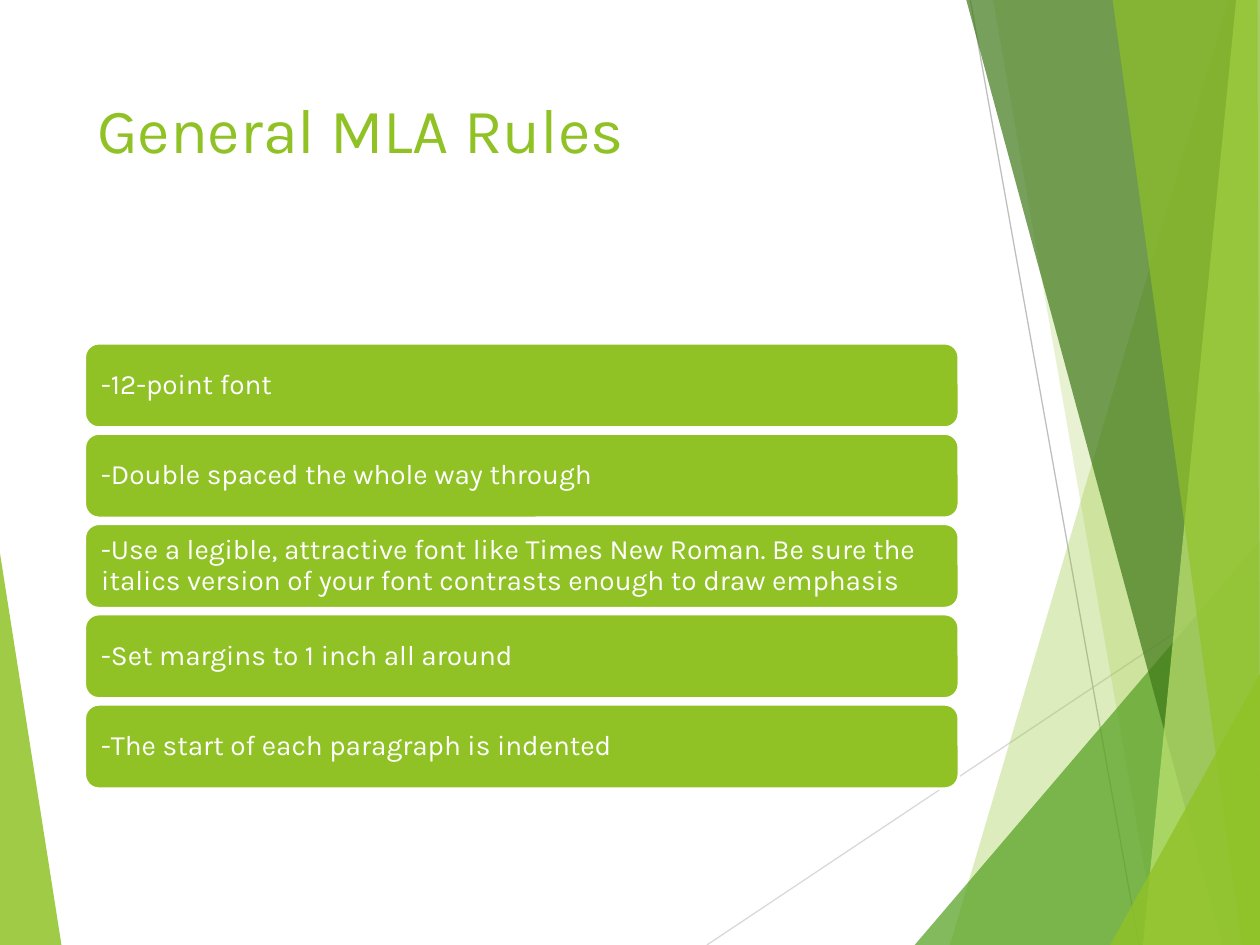
from lxml import etree
from pptx import Presentation
from pptx.dml.color import RGBColor
from pptx.enum.shapes import MSO_CONNECTOR, MSO_SHAPE
from pptx.enum.text import MSO_ANCHOR, PP_ALIGN
from pptx.oxml.ns import qn
from pptx.util import Cm, Pt

STRAIGHT = MSO_CONNECTOR.STRAIGHT
ROUNDED = MSO_SHAPE.ROUNDED_RECTANGLE
MIDDLE, TOP = MSO_ANCHOR.MIDDLE, MSO_ANCHOR.TOP
LEFT = PP_ALIGN.LEFT

FONT = "Karla"
GREEN, WHITE = "90C226", "FFFFFF"
WIDTH, HEIGHT = 25.4, 19.05  # all lengths in centimetres

TITLE = "General MLA Rules"
RULES = [
    "-12-point font",
    "-Double spaced the whole way through",
    "-Use a legible, attractive font like Times New Roman. Be sure the "
    "italics version of your font contrasts enough to draw emphasis",
    "-Set margins to 1 inch all around",
    "-The start of each paragraph is indented",
]

CORNER = (WIDTH, HEIGHT)
TOP_CORNER = (WIDTH, 0)
LEFT_FACET = ([(0, 11.15), (1.24, HEIGHT), (0, HEIGHT)], GREEN, 85)
RAYS = [  # start, end, colour
    ((14.25, HEIGHT), (WIDTH, 11.61), "D9D9D9"),
    ((19.56, 0), (22.96, HEIGHT), "BFBFBF"),
]
RIGHT_FACETS = [  # corners, colour, opacity in percent
    ([(24.77, 0), (19.15, HEIGHT), CORNER, TOP_CORNER], GREEN, 30),
    ([(20.02, 0), (23.34, HEIGHT), CORNER, TOP_CORNER], GREEN, 20),
    ([(18.44, HEIGHT), (WIDTH, 10.9), CORNER], "54A021", 72),
    ([(19.48, 0), (24.64, HEIGHT), CORNER, TOP_CORNER], "3F7819", 70),
    ([(24.92, 0), (23.04, HEIGHT), CORNER, TOP_CORNER], "C0E474", 70),
    ([(22.43, 0), (25.04, HEIGHT), CORNER, (25.35, 0)], GREEN, 65),
    ([(22.38, HEIGHT), (WIDTH, 13.59), CORNER], GREEN, 80),
]

CONTENT_LEFT, CONTENT_WIDTH = 1.71, 17.62
TITLE_TOP, TITLE_HEIGHT = 1.69, 3.67
BARS_TOP, BAR_HEIGHT, BAR_PITCH = 6.92, 1.7, 1.82


def color(hex_code):
    return RGBColor.from_string(hex_code)


def fill_solid(shape, hex_code):
    shape.shadow.inherit = False
    shape.fill.solid()
    shape.fill.fore_color.rgb = color(hex_code)


def add_facet(slide, corners, hex_code, opacity):
    points = [(Cm(x), Cm(y)) for x, y in corners]
    builder = slide.shapes.build_freeform(*points[0])
    builder.add_line_segments(points[1:], close=True)
    facet = builder.convert_to_shape()
    fill_solid(facet, hex_code)
    facet.line.fill.background()
    solid = facet.fill._xPr.find(qn("a:solidFill"))
    etree.SubElement(solid[0], qn("a:alpha"), val=str(opacity * 1000))


def add_ray(slide, start, end, hex_code):
    ends = [Cm(length) for length in start + end]
    ray = slide.shapes.add_connector(STRAIGHT, *ends)
    ray.line.color.rgb = color(hex_code)
    ray.line.width = Pt(0.75)
    etree.SubElement(ray._element.spPr, qn("a:effectLst"))


def write(shape, text, size, hex_code, anchor, inset_y):
    frame = shape.text_frame
    frame.word_wrap = True
    frame.vertical_anchor = anchor
    frame.margin_left = frame.margin_right = Cm(0.25)
    frame.margin_top = frame.margin_bottom = Cm(inset_y)
    paragraph = frame.paragraphs[0]
    paragraph.text = text
    paragraph.alignment = LEFT
    paragraph.font.name = FONT
    paragraph.font.size = Pt(size)
    paragraph.font.color.rgb = color(hex_code)
    return paragraph


def add_rule(slide, rule, top):
    bar = slide.shapes.add_shape(
        ROUNDED, Cm(CONTENT_LEFT), Cm(top), Cm(CONTENT_WIDTH), Cm(BAR_HEIGHT))
    fill_solid(bar, GREEN)
    bar.line.color.rgb = color(WHITE)
    bar.line.width = Pt(1.5)
    write(bar, rule, 16, WHITE, MIDDLE, 0.2).line_spacing = 0.9


def main():
    deck = Presentation()
    deck.slide_width, deck.slide_height = Cm(WIDTH), Cm(HEIGHT)
    slide = deck.slides.add_slide(deck.slide_layouts[6])

    add_facet(slide, *LEFT_FACET)
    for ray in RAYS:
        add_ray(slide, *ray)
    for facet in RIGHT_FACETS:
        add_facet(slide, *facet)

    title = slide.shapes.add_textbox(
        Cm(CONTENT_LEFT), Cm(TITLE_TOP), Cm(CONTENT_WIDTH), Cm(TITLE_HEIGHT))
    write(title, TITLE, 36, GREEN, TOP, 0.13)

    for row, rule in enumerate(RULES):
        add_rule(slide, rule, BARS_TOP + row * BAR_PITCH)

    deck.save("out.pptx")


if __name__ == "__main__":
    main()
